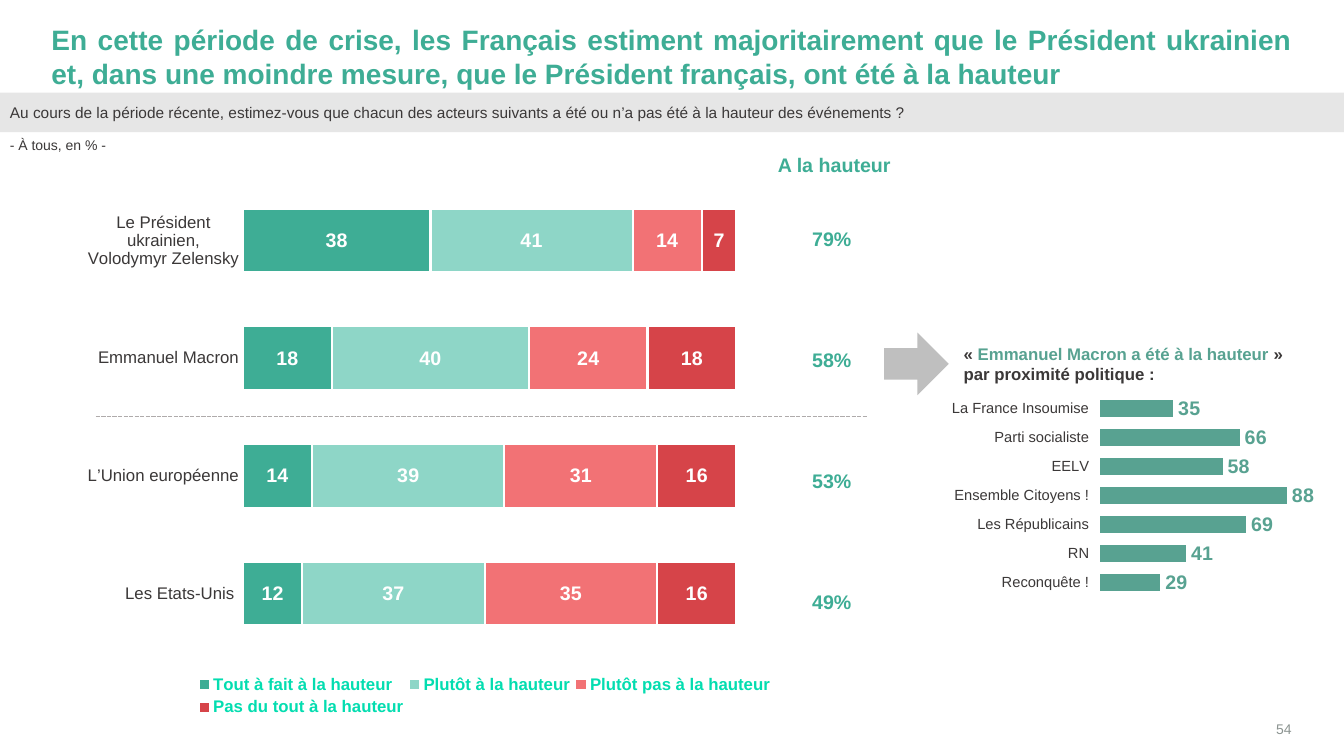
from lxml import etree
from pptx import Presentation
from pptx import util as u
from pptx.chart.data import CategoryChartData
from pptx.dml.color import RGBColor
from pptx.enum import chart as charts, dml, shapes, text
from pptx.oxml import parse_xml
from pptx.oxml.ns import nsdecls, qn

GREEN = RGBColor(0x3E, 0xAD, 0x95)
LIGHT_GREEN = RGBColor(0x8E, 0xD6, 0xC7)
SALMON = RGBColor(0xF2, 0x72, 0x75)
RED = RGBColor(0xD6, 0x44, 0x49)
SAGE = RGBColor(0x58, 0xA2, 0x91)
MINT = RGBColor(0x03, 0xDD, 0xB0)
DEEP_GREEN = RGBColor(0x01, 0x45, 0x37)
DARK = RGBColor(0x3B, 0x38, 0x38)
GREY = RGBColor(0x8C, 0x94, 0x91)
BAND_GREY = RGBColor(0xE6, 0xE6, 0xE6)
ARROW_GREY = RGBColor(0xBF, 0xBF, 0xBF)
LINE_GREY = RGBColor(0xAF, 0xAB, 0xAB)
WHITE = RGBColor(0xFF, 0xFF, 0xFF)

ACTORS = [
    "Le Président ukrainien, Volodymyr Zelensky",
    "Emmanuel Macron",
    "L’Union européenne",
    "Les Etats-Unis ",
]
OPINIONS = [
    ("Tout à fait à la hauteur", (38, 18, 14, 12), GREEN),
    ("Plutôt à la hauteur", (41, 40, 39, 37), LIGHT_GREEN),
    ("Plutôt pas à la hauteur", (14, 24, 31, 35), SALMON),
    ("Pas du tout à la hauteur", (7, 18, 16, 16), RED),
]
TOTALS = ["79%", "58%", "53%", "49%"]
PARTIES = ["La France Insoumise", "Parti socialiste", "EELV", "Ensemble Citoyens !",
           "Les Républicains", "RN", "Reconquête !"]
PARTY_SCORES = [("A la hauteur", (35, 66, 58, 88, 69, 41, 29), SAGE)]


def inches(*lengths):
    return [u.Inches(length) for length in lengths]


def style_font(font, size, color, bold=False):
    font.name = "Arial"
    font.size = u.Pt(size)
    font.bold = bold
    font.color.rgb = color


def fill_frame(frame, words, size, color, bold=False, align=text.PP_ALIGN.LEFT,
               anchor=text.MSO_ANCHOR.TOP, margins=(0.1, 0.05, 0.1, 0.05)):
    frame.word_wrap = True
    frame.auto_size = text.MSO_AUTO_SIZE.NONE
    frame.vertical_anchor = anchor
    (frame.margin_left, frame.margin_top,
     frame.margin_right, frame.margin_bottom) = inches(*margins)
    paragraph = frame.paragraphs[0]
    paragraph.alignment = align
    if words:
        paragraph.text = words
    style_font(paragraph.font, size, color, bold)
    return paragraph


def add_label(slide, box, words, size, color, **options):
    frame = slide.shapes.add_textbox(*inches(*box)).text_frame
    return fill_frame(frame, words, size, color, **options)


def add_block(slide, preset, box, color):
    shape = slide.shapes.add_shape(preset, *inches(*box))
    shape.shadow.inherit = False
    shape.fill.solid()
    shape.fill.fore_color.rgb = color
    shape.line.fill.background()
    return shape


def make_layout(box, inner=False):
    target = '<c:layoutTarget val="inner"/>' if inner else ""
    modes = "".join(f'<c:{side}Mode val="edge"/>' for side in "xy")
    sizes = "".join(f'<c:{side} val="{value}"/>' for side, value in zip("xywh", box))
    return parse_xml(f'<c:layout {nsdecls("c")}><c:manualLayout>{target}{modes}{sizes}'
                     '</c:manualLayout></c:layout>')


def add_bars(slide, box, kind, categories, series_list, plot_box, gap,
             category_size, label_color, label_position):
    data = CategoryChartData()
    data.categories = categories
    for name, values, _ in series_list:
        data.add_series(name, values)
    chart = slide.shapes.add_chart(kind, *inches(*box), data).chart
    style_font(chart.font, 10, DEEP_GREEN)
    chart.has_title = False
    chart.has_legend = False
    plot_area = chart.plots[0]._element.getparent()
    for layout in plot_area.findall(qn("c:layout")):
        plot_area.remove(layout)
    plot_area.insert(0, make_layout(plot_box, inner=True))

    chart.value_axis.visible = False
    chart.value_axis.has_major_gridlines = False
    axis = chart.category_axis
    axis.reverse_order = True
    axis.has_major_gridlines = False
    axis.format.line.fill.background()
    style_font(axis.tick_labels.font, category_size, DARK)

    plot = chart.plots[0]
    plot.gap_width = gap
    plot.vary_by_categories = False
    for series, (_, _, color) in zip(plot.series, series_list):
        series.format.fill.solid()
        series.format.fill.fore_color.rgb = color
        series.format.line.color.rgb = WHITE
        series.format.line.width = u.Pt(1.5)
        labels = series.data_labels
        labels.show_value = True
        labels.position = label_position
        style_font(labels.font, 14, label_color, True)
    return chart


def add_heading(slide, left, top, width):
    title = slide.shapes.title
    title.left, title.top, title.width, title.height = inches(left, top, width, 0.36)
    fill_frame(title.text_frame,
               "En cette période de crise, les Français estiment majoritairement que le "
               "Président ukrainien et, dans une moindre mesure, que le Président français, "
               "ont été à la hauteur",
               20, GREEN, bold=True, align=text.PP_ALIGN.JUSTIFY,
               anchor=text.MSO_ANCHOR.MIDDLE, margins=(0, 0, 0, 0))


def add_question(slide, left, top, width):
    band = add_block(slide, shapes.MSO_SHAPE.RECTANGLE, (left, top, width, 0.39), BAND_GREY)
    fill_frame(band.text_frame,
               "Au cours de la période récente, estimez-vous que chacun des acteurs suivants "
               "a été ou n’a pas été à la hauteur des événements ?",
               11, DARK, align=text.PP_ALIGN.JUSTIFY, anchor=text.MSO_ANCHOR.MIDDLE,
               margins=(0.1, 0.1, 0.2, 0.1))
    add_label(slide, (left, top + 0.39, 2.17, 0.27), "- À tous, en % -", 10, DARK)


def add_opinions(slide, left, top, width, height):
    chart = add_bars(slide, (left, top, width, height),
                     charts.XL_CHART_TYPE.BAR_STACKED_100, ACTORS, OPINIONS,
                     (0.22, 0.031, 0.694, 0.837), 85, 12, WHITE,
                     charts.XL_LABEL_POSITION.CENTER)
    chart.plots[0].overlap = 100
    chart.category_axis.major_tick_mark = charts.XL_TICK_MARK.NONE
    chart.has_legend = True
    legend = chart.legend
    legend.position = charts.XL_LEGEND_POSITION.BOTTOM
    legend.include_in_layout = False
    style_font(legend.font, 12, MINT, True)
    for layout in legend._element.findall(qn("c:layout")):
        legend._element.remove(layout)
    legend._element.find(qn("c:legendPos")).addnext(make_layout((0.15, 0.9, 0.82, 0.09)))

    separator = slide.shapes.add_connector(
        shapes.MSO_CONNECTOR.STRAIGHT,
        *inches(left + 0.09, top + 2.5, left + 7.74, top + 2.5))
    separator.line.color.rgb = LINE_GREY
    separator.line.width = u.Pt(1)
    separator.line.dash_style = dml.MSO_LINE.SQUARE_DOT
    etree.SubElement(separator._element.spPr, qn("a:effectLst"))


def add_totals(slide, left, top, width, row_height):
    add_label(slide, (left - 0.36, top - 0.26, 1.75, 0.24), "A la hauteur", 14, GREEN,
              bold=True, align=text.PP_ALIGN.CENTER, margins=(0, 0, 0, 0))
    table = slide.shapes.add_table(
        len(TOTALS), 1, *inches(left, top, width, row_height * len(TOTALS))).table
    table.first_row = False
    table.horz_banding = False
    for row, total in enumerate(TOTALS):
        cell = table.cell(row, 0)
        cell.fill.background()
        cell.vertical_anchor = text.MSO_ANCHOR.MIDDLE
        paragraph = cell.text_frame.paragraphs[0]
        paragraph.text = total
        paragraph.alignment = text.PP_ALIGN.CENTER
        style_font(paragraph.font, 14, GREEN, True)


def add_parties(slide, left, top, width):
    add_block(slide, shapes.MSO_SHAPE.RIGHT_ARROW, (left, top, 0.64, 0.62), ARROW_GREY)
    paragraph = add_label(slide, (left + 0.69, top + 0.06, 3.53, 0.27), "", 12, DARK, bold=True)
    for words, color in (("«\u00a0", DARK),
                         ("Emmanuel Macron a été à la hauteur\u00a0", SAGE),
                         ("» par proximité politique :", DARK)):
        run = paragraph.add_run()
        run.text = words
        style_font(run.font, 12, color, True)
    chart = add_bars(slide, (left + 0.58, top + 0.55, width - 0.58, 2.15),
                     charts.XL_CHART_TYPE.BAR_CLUSTERED, PARTIES, PARTY_SCORES,
                     (0.403, 0.027, 0.553, 0.938), 57, 10.5, SAGE,
                     charts.XL_LABEL_POSITION.OUTSIDE_END)
    chart.value_axis.minimum_scale = 0
    chart.value_axis.maximum_scale = 100


def main():
    presentation = Presentation()
    presentation.slide_width, presentation.slide_height = inches(13.33, 7.5)
    slide = presentation.slides.add_slide(presentation.slide_layouts[5])
    add_heading(slide, 0.51, 0.38, 12.31)
    add_question(slide, 0, 0.92, 13.33)
    add_opinions(slide, 0.86, 1.63, 7.05, 5.58)
    add_totals(slide, 7.76, 1.78, 0.98, 1.2)
    add_parties(slide, 8.77, 3.3, 4.43)
    add_label(slide, (12.22, 7.07, 0.59, 0.24), "54", 10, GREY, align=text.PP_ALIGN.RIGHT,
              anchor=text.MSO_ANCHOR.BOTTOM, margins=(0, 0, 0, 0))
    presentation.save("out.pptx")


if __name__ == "__main__":
    main()
